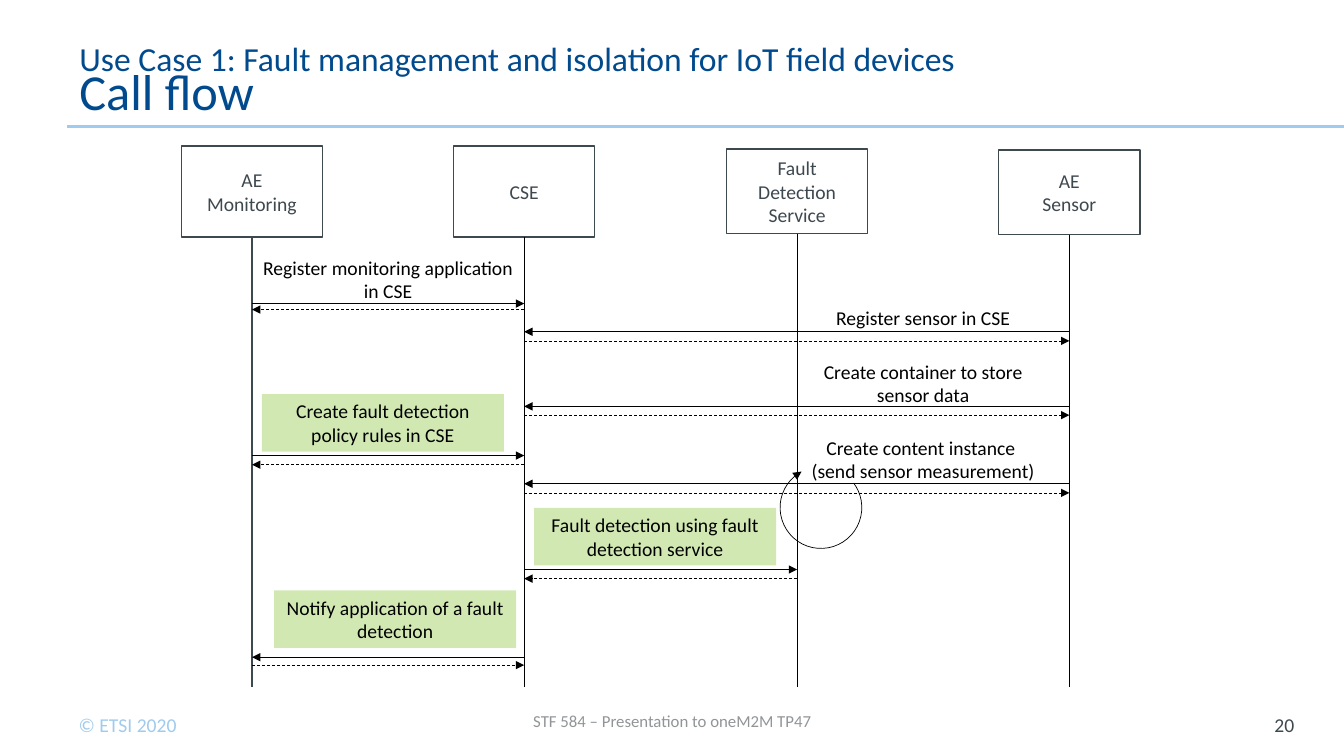
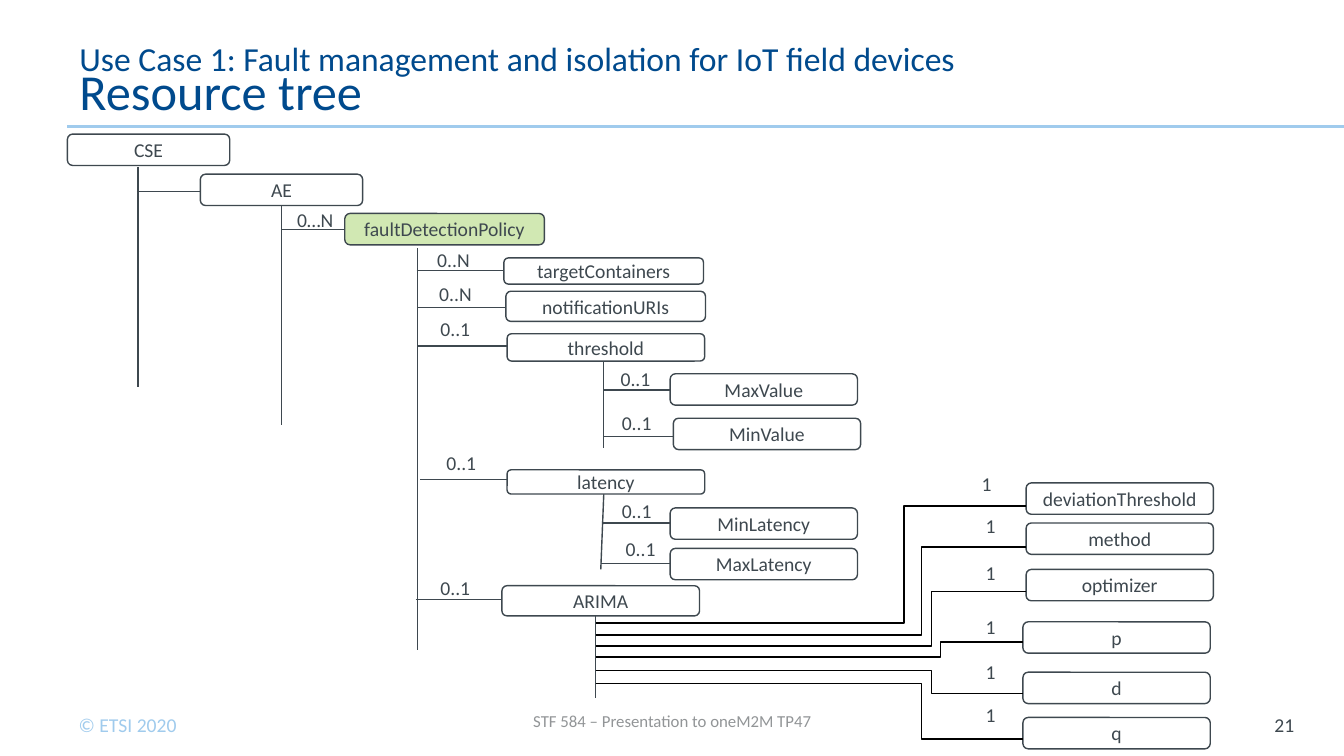
from lxml.etree import SubElement
from pptx import Presentation
from pptx.dml.color import RGBColor
from pptx.enum.dml import MSO_LINE as Dash
from pptx.enum.shapes import MSO_CONNECTOR as Conn, MSO_SHAPE as Geo
from pptx.enum.text import MSO_ANCHOR as Anchor, MSO_AUTO_SIZE as Fit, PP_ALIGN as Align
from pptx.oxml.ns import qn
from pptx.util import Cm, Pt

NAVY = RGBColor(0x00, 0x4A, 0x8D)
SKY = RGBColor(0xA0, 0xCB, 0xED)
SLATE = RGBColor(0x3E, 0x48, 0x4F)
GREY = RGBColor(0x92, 0x95, 0x97)
GREEN = RGBColor(0xD1, 0xE8, 0xB3)
WHITE = RGBColor(0xFF, 0xFF, 0xFF)
BLACK = RGBColor(0x00, 0x00, 0x00)
FONT = "Calibri"


def put(slide, text, x, y, w, h, geo=None, fill=None, color=SLATE, size=14,
        align=Align.CENTER, anchor=Anchor.MIDDLE, wrap=True):
    box = Cm(x), Cm(y), Cm(w), Cm(h)
    if geo is None:
        shape = slide.shapes.add_textbox(*box)
    else:
        shape = slide.shapes.add_shape(geo, *box)
        shape.shadow.inherit = False
        shape.line.color.rgb = SLATE
        shape.line.width = Pt(1)
    if fill is None:
        shape.fill.background()
    else:
        shape.fill.solid()
        shape.fill.fore_color.rgb = fill
    frame = shape.text_frame
    frame.word_wrap = wrap
    frame.vertical_anchor = anchor
    frame.text = text
    for para in frame.paragraphs:
        para.alignment = align
        for run in para.runs:
            run.font.name = FONT
            run.font.size = Pt(size)
            run.font.color.rgb = color
    return shape


def wire(slide, x1, y1, x2, y2, color=SLATE, width=1, dash=None, arrow=False, bend=None):
    kind = Conn.STRAIGHT if bend is None else Conn.ELBOW
    link = slide.shapes.add_connector(kind, Cm(x1), Cm(y1), Cm(x2), Cm(y2))
    link.line.color.rgb = color
    link.line.width = Pt(width)
    if dash:
        link.line.dash_style = dash
    props = link.element.spPr
    if arrow:
        SubElement(props.find(qn("a:ln")), qn("a:tailEnd"), type="triangle")
    if bend is not None:
        share = round((bend - x1) / (x2 - x1) * 100000)
        guides = props.find(qn("a:prstGeom")).find(qn("a:avLst"))
        SubElement(guides, qn("a:gd"), name="adj1", fmla=f"val {share}")
    SubElement(props, qn("a:effectLst"))


deck = Presentation()
deck.slide_width = Cm(33.87)
deck.slide_height = Cm(19.05)

pages = []
for number, topic in ((20, "Call flow"), (21, "Resource tree")):
    page = deck.slides.add_slide(deck.slide_layouts[5])
    pages.append(page)
    title = page.shapes.title
    title.left, title.top, title.width, title.height = Cm(1.7), Cm(0.76), Cm(26.47), Cm(2.42)
    frame = title.text_frame
    frame.auto_size = Fit.NONE
    frame.word_wrap = True
    frame.vertical_anchor = Anchor.BOTTOM
    frame.margin_left = frame.margin_right = Cm(0.3)
    frame.margin_top = frame.margin_bottom = Cm(0.15)
    frame.text = f"Use Case 1: Fault management and isolation for IoT field devices\v{topic}"
    para = frame.paragraphs[0]
    para.alignment = Align.LEFT
    para.line_spacing = Pt(30)
    for run, size in zip(para.runs, (24, 36)):
        run.font.name = FONT
        run.font.size = Pt(size)
        run.font.color.rgb = NAVY
    wire(page, 1.7, 3.18, 33.87, 3.18, SKY, 2.25)
    put(page, "© ETSI 2020", 1.73, 17.83, 3.4, 0.86, color=SKY, align=Align.LEFT, anchor=Anchor.TOP)
    put(page, "STF 584 – Presentation to oneM2M TP47", 11.23, 17.65, 11.43, 1.02, color=GREY, size=12)
    put(page, str(number), 31.12, 17.75, 1.75, 1.02, align=Align.RIGHT)
flow, tree = pages

APP, CSE, FAULT, SENSOR = 6.35, 13.21, 20.09, 26.95
lanes = (
    ("AE\nMonitoring", APP, 3.68, 2.29, SLATE, 1),
    ("CSE", CSE, 3.68, 2.29, BLACK, 0.5),
    ("Fault Detection\vService", FAULT, 3.76, 2.13, BLACK, 0.5),
    ("AE\vSensor", SENSOR, 3.78, 2.13, BLACK, 0.5),
)
for name, x, y, h, color, width in lanes:
    put(flow, name, x - 1.78, y, 3.56, h, Geo.RECTANGLE, WHITE)
    wire(flow, x, y + h, x, 17.3, color, width)

notes = (
    ("Register monitoring application in CSE", APP, 6.32, 6.86, 1.45, None),
    ("Register sensor in CSE", 20, 7.59, 6.53, 0.86, None),
    ("Create container to store sensor data", 20, 8.94, 6.53, 1.45, None),
    ("Create content instance \v(send sensor measurement)", 20, 10.85, 6.53, 1.45, None),
    ("Create fault detection policy rules in CSE", 6.6, 9.93, 6.1, 1.45, GREEN),
    ("Fault detection using fault detection service", 13.46, 12.8, 6.1, 1.45, GREEN),
    ("Notify application of a fault detection", 6.91, 14.88, 6.1, 1.45, GREEN),
)
for text, x, y, w, h, fill in notes:
    put(flow, text, x, y, w, h, fill=fill, color=BLACK, anchor=Anchor.TOP)

calls = (
    (APP, CSE, 7.65, 7.8),
    (SENSOR, CSE, 8.36, 8.59),
    (SENSOR, CSE, 10.24, 10.46),
    (APP, CSE, 11.48, 11.71),
    (SENSOR, CSE, 12.19, 12.42),
    (CSE, FAULT, 14.35, 14.58),
    (CSE, APP, 16.56, 16.76),
)
for start, end, ask, reply in calls:
    wire(flow, start, ask, end, ask, BLACK, 0.5, arrow=True)
    wire(flow, end, reply, start, reply, BLACK, 0.5, Dash.DASH, True)

loop = put(flow, "", 19.66, 11.76, 2.06, 2.06, Geo.ARC)
loop.adjustments[0] = 1.96
loop.adjustments[1] = 169.11
loop.rotation = 319.8
loop.line.color.rgb = BLACK
loop.line.width = Pt(0.5)
SubElement(loop.element.spPr.find(qn("a:ln")), qn("a:tailEnd"), type="triangle")

trunks = (
    (3.48, 4.22, 3.48, 9.75),
    (7.09, 5.18, 7.09, 10.72),
    (10.52, 6.25, 10.52, 16.38),
    (15.21, 9.12, 15.21, 11.3),
    (15.24, 11.84, 15.14, 14.35),
    (15.01, 15.04, 15.01, 17.6),
)
for ends in trunks:
    wire(tree, *ends)

nodes = (
    ("CSE", 1.7, 3.38, 4.09, 0.79, None),
    ("AE", 5.05, 4.39, 4.09, 0.79, (3.45, 4.83)),
    ("faultDetectionPolicy", 8.69, 5.38, 5.03, 0.79, (7.09, 5.79)),
    ("targetContainers", 12.7, 6.5, 5.03, 0.66, (10.5, 6.81)),
    ("notificationURIs", 12.75, 7.34, 5.03, 0.76, (10.52, 7.75)),
    ("threshold", 12.78, 8.41, 4.98, 0.69, (10.54, 8.72)),
    ("MaxValue", 16.89, 9.42, 4.72, 0.79, (15.21, 9.83)),
    ("MinValue", 16.97, 10.54, 4.72, 0.79, (15.21, 11)),
    ("latency", 12.78, 11.84, 4.98, 0.61, (10.59, 12.09)),
    ("MinLatency", 16.89, 12.8, 4.72, 0.79, (15.17, 13.18)),
    ("MaxLatency", 16.89, 13.82, 4.72, 0.79, (15.14, 14.2)),
    ("ARIMA", 12.65, 14.76, 4.98, 0.76, (10.48, 15.11)),
)
for name, x, y, w, h, branch in nodes:
    fill = GREEN if name == "faultDetectionPolicy" else WHITE
    put(tree, name, x, y, w, h, Geo.ROUNDED_RECTANGLE, fill)
    if branch:
        wire(tree, *branch, x, branch[1])

leaves = (
    ("deviationThreshold", 25.86, 12.17, 15.7, 22.78, 12.75),
    ("method", 25.86, 13.18, 16, 23.22, 13.79),
    ("optimizer", 25.86, 14.35, 16.28, 23.47, 14.91),
    ("p", 25.78, 15.67, 16.56, 23.7, 16.18),
    ("d", 25.78, 16.94, 16.89, 23.47, 17.48),
    ("q", 25.78, 18.08, 17.22, 23.22, 18.62),
)
for name, x, y, start, bend, end in leaves:
    put(tree, name, x, y, 4.72, 0.79, Geo.ROUNDED_RECTANGLE, WHITE)
    wire(tree, 15.01, start, x, end, BLACK, bend=bend)

widths = {"0…N": 1.42, "0..N": 1.35, "0..1": 1.27, "1": 0.76}
counts = (
    ("0…N", 7.24, 5.11), ("0..N", 10.77, 6.12), ("0..N", 10.82, 6.99),
    ("0..1", 10.85, 7.87), ("0..1", 11, 11.23), ("0..1", 10.85, 14.38),
    ("0..1", 15.39, 9.12), ("0..1", 15.42, 10.24),
    ("0..1", 15.42, 12.45), ("0..1", 15.52, 13.41),
    ("1", 24.49, 11.76), ("1", 24.59, 12.83), ("1", 24.59, 14),
    ("1", 24.59, 15.37), ("1", 24.59, 16.51), ("1", 24.59, 17.6),
)
for text, x, y in counts:
    put(tree, text, x, y, widths[text], 0.86, align=Align.LEFT, anchor=Anchor.TOP, wrap=False)

deck.save("out.pptx")
